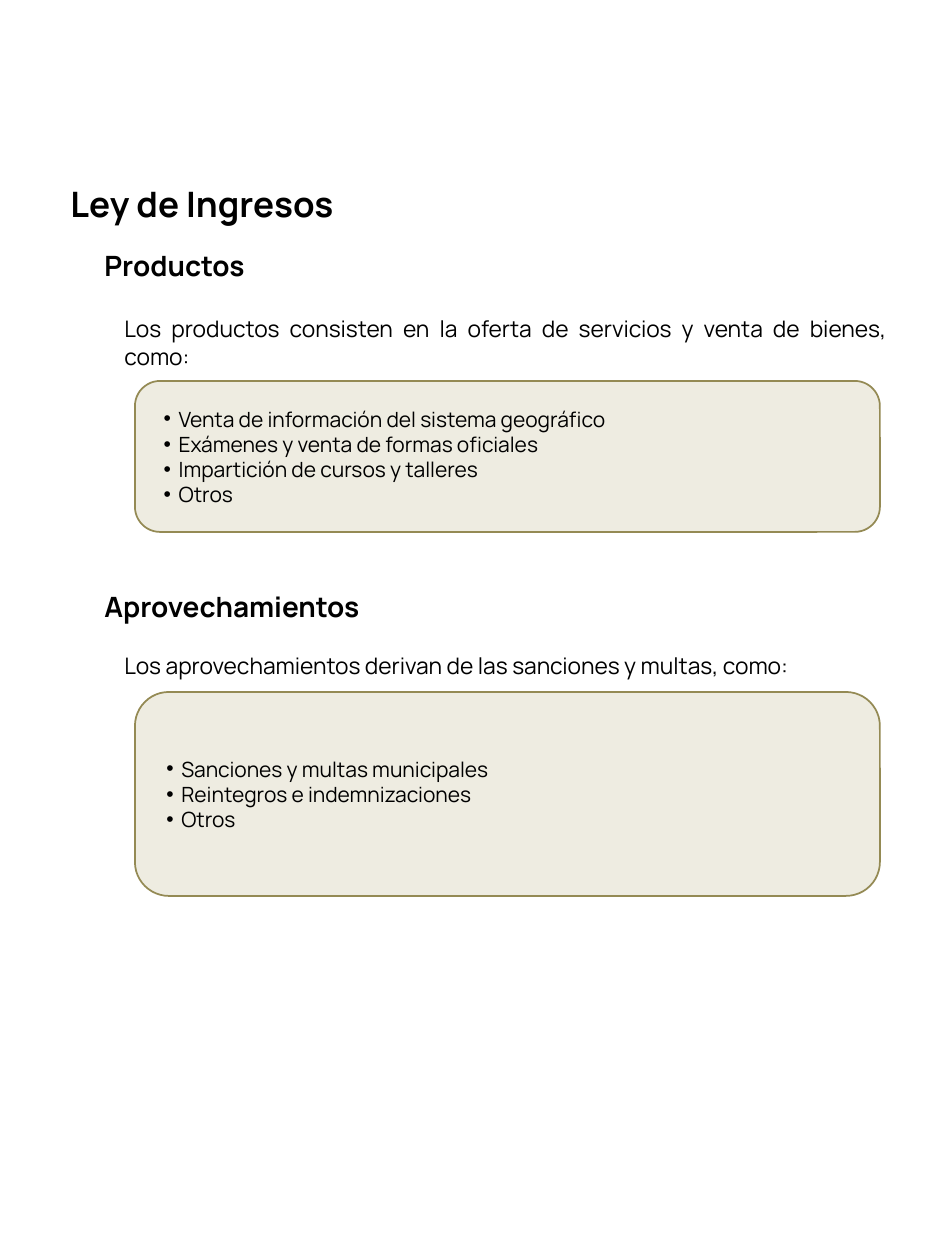
"""Build the Ley de Ingresos slide on products and other municipal income."""
from dataclasses import dataclass

from lxml import etree
from pptx import Presentation
from pptx import util as u
from pptx.dml.color import RGBColor
from pptx.enum import shapes, text
from pptx.oxml.ns import qn

EMU_PER_PX = 914400 / 126


@dataclass(frozen=True)
class Theme:
    font: str = "Manrope"
    ink: str = "000000"
    panel: str = "EEECE1"
    border: str = "948A54"
    title: int = 20
    heading: int = 16
    intro: int = 13
    item: int = 12


THEME = Theme()
TITLE = ("Ley de Ingresos", (58, 176, 775, 55))
SECTIONS = [
    {
        "heading": ("Productos", (92, 242, 824, 47)),
        "intro": (
            "Los productos consisten en la oferta de servicios y venta de bienes, como:",
            (112, 309, 786, 68),
        ),
        "items": [
            "Venta de información del sistema geográfico",
            "Exámenes y venta de formas oficiales",
            "Impartición de cursos y talleres",
            "Otros",
        ],
        "panel": (135, 381, 745, 151),
    },
    {
        "heading": ("Aprovechamientos", (92, 583, 824, 47)),
        "intro": (
            "Los aprovechamientos derivan de las sanciones y multas, como:",
            (112, 646, 832, 40),
        ),
        "items": [
            "Sanciones y multas municipales",
            "Reintegros e indemnizaciones",
            "Otros",
        ],
        "panel": (135, 692, 745, 204),
    },
]


def px(length):
    return u.Emu(round(length * EMU_PER_PX))


def write(paragraph, wording, size, bold=False, align=text.PP_ALIGN.LEFT):
    paragraph.alignment = align
    run = paragraph.add_run()
    run.text = wording
    run.font.name = THEME.font
    run.font.size = u.Pt(size)
    run.font.bold = bold
    run.font.color.rgb = RGBColor.from_string(THEME.ink)


def add_label(slide, wording, place, size, bold=False, align=text.PP_ALIGN.LEFT):
    frame = slide.shapes.add_textbox(*map(px, place)).text_frame
    frame.word_wrap = True
    write(frame.paragraphs[0], wording, size, bold, align)


def add_bullet(paragraph):
    properties = paragraph._p.get_or_add_pPr()
    properties.set("marL", str(px(24)))
    properties.set("indent", str(px(-15)))
    etree.SubElement(properties, qn("a:buFont"), typeface="Arial")
    etree.SubElement(properties, qn("a:buChar"), char="•")


def add_panel(slide, items, place):
    panel = slide.shapes.add_shape(shapes.MSO_SHAPE.ROUNDED_RECTANGLE, *map(px, place))
    panel.shadow.inherit = False
    panel.fill.solid()
    panel.fill.fore_color.rgb = RGBColor.from_string(THEME.panel)
    panel.line.color.rgb = RGBColor.from_string(THEME.border)
    panel.line.width = u.Pt(1)
    frame = panel.text_frame
    frame.word_wrap = True
    frame.vertical_anchor = text.MSO_ANCHOR.MIDDLE
    for index, item in enumerate(items):
        paragraph = frame.add_paragraph() if index else frame.paragraphs[0]
        add_bullet(paragraph)
        write(paragraph, item, THEME.item)


def main():
    deck = Presentation()
    deck.slide_width, deck.slide_height = px(945), px(1260)
    slide = deck.slides.add_slide(deck.slide_layouts[6])
    add_label(slide, *TITLE, THEME.title, bold=True)
    for section in SECTIONS:
        add_label(slide, *section["heading"], THEME.heading, bold=True)
        add_panel(slide, section["items"], section["panel"])
        add_label(slide, *section["intro"], THEME.intro, align=text.PP_ALIGN.JUSTIFY)
    deck.save("out.pptx")


if __name__ == "__main__":
    main()
